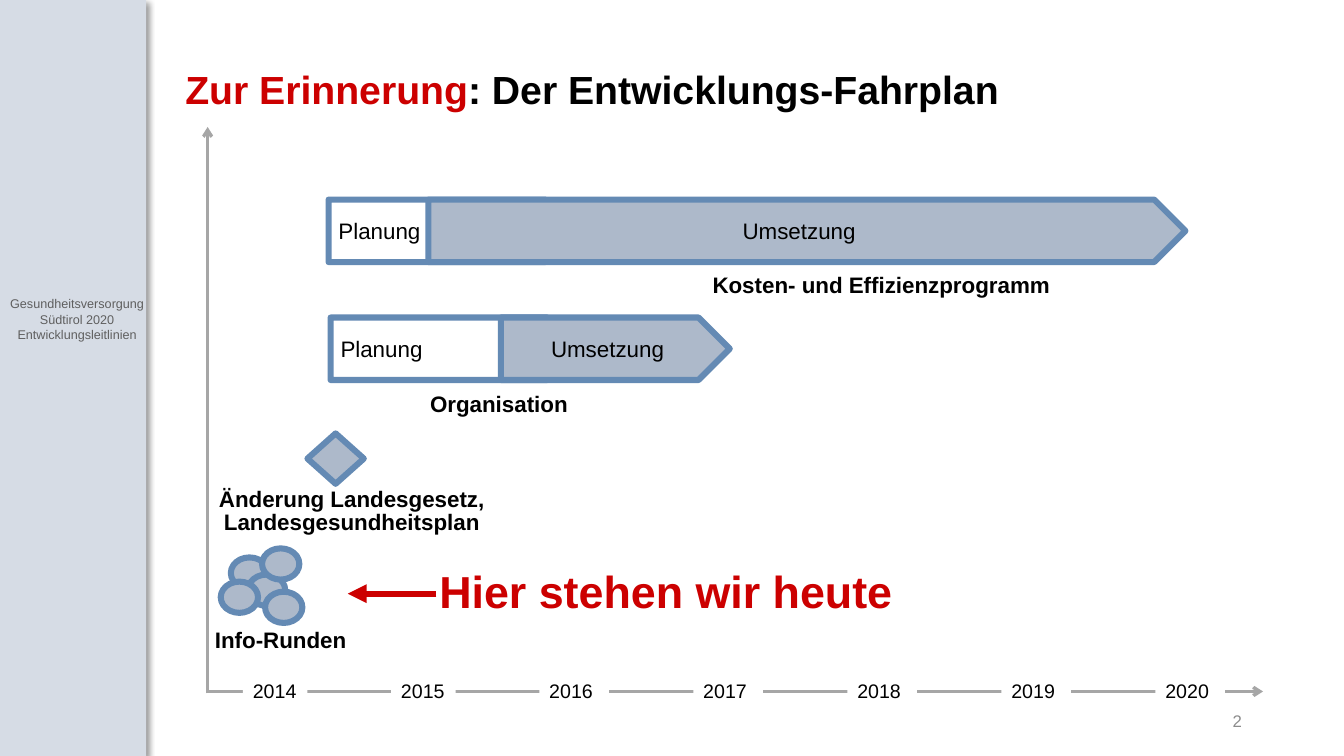
import pptx
import pptx.util
import pptx.dml.color
import pptx.enum.shapes
import pptx.enum.text
import pptx.oxml
import pptx.oxml.ns

CELL = pptx.util.Inches(0.1)
COLUMNS, ROWS = 133.33, 75
STEEL, GREY, RED, BLACK, WHITE, BLUE = "ADB9CA", "A6A6A6", "CC0000", "000000", "FFFFFF", "648AB4"
color = pptx.dml.color.RGBColor.from_string
Kind = pptx.enum.shapes.MSO_SHAPE
Align = pptx.enum.text.PP_ALIGN
Anchor = pptx.enum.text.MSO_ANCHOR
DRAWING = pptx.oxml.ns.nsdecls("a")

deck = pptx.Presentation()
deck.slide_width = int(COLUMNS * CELL)
deck.slide_height = ROWS * CELL
slide = deck.slides.add_slide(deck.slide_layouts[6])


def place(shapes, kind, area, fill=None, outline=None):
    shape = shapes.add_shape(kind, *[int(part * CELL) for part in area])
    shape.shadow.inherit = False
    if fill:
        shape.fill.solid()
        shape.fill.fore_color.rgb = color(fill)
    else:
        shape.fill.background()
    if outline:
        shape.line.color.rgb = color(outline)
        shape.line.width = pptx.util.Pt(4.33)
    else:
        shape.line.fill.background()
    return shape


def write(target, lines, size, ink=BLACK, bold=False, align=Align.LEFT,
          anchor=Anchor.TOP, spacing=None, wrap=True):
    if isinstance(target, tuple):
        target = slide.shapes.add_textbox(*[int(part * CELL) for part in target])
    frame = target.text_frame
    frame.word_wrap = wrap
    frame.vertical_anchor = anchor
    frame.text = "\n".join(lines)
    for paragraph in frame.paragraphs:
        paragraph.alignment = align
        paragraph.line_spacing = spacing
        paragraph.font.name = "Arial"
        paragraph.font.size = pptx.util.Pt(size)
        paragraph.font.bold = bold
        paragraph.font.color.rgb = color(ink)
    return frame.paragraphs[0]


sidebar = place(slide.shapes, Kind.RECTANGLE, (0, 0, 14.5, ROWS), "D6DCE5")
sidebar.shadow.inherit = True
sidebar._element.spPr.append(pptx.oxml.parse_xml(
    f'<a:effectLst {DRAWING}><a:outerShdw blurRad="50800" dist="38100" dir="2700000">'
    '<a:srgbClr val="000000"><a:alpha val="40000"/></a:srgbClr></a:outerShdw></a:effectLst>'))
write((0, 28.9, 15.3, 7), ["Gesundheitsversorgung Südtirol 2020", "Entwicklungsleitlinien"],
      9, "5F5F5F", align=Align.CENTER)

title = write((17.4, 4, 106.8, 10.3), ["Zur Erinnerung"], 28, bold=True,
              anchor=Anchor.MIDDLE, spacing=0.9)
title.runs[0].font.color.rgb = color(RED)
title.add_run().text = ": Der Entwicklungs-Fahrplan"

for start, end, ink, width, tip in [
    ((20.6, 68.8), (20.6, 12.6), GREY, 2.25, "arrow"),
    ((20.6, 68.6), (125.3, 68.6), GREY, 2.25, "arrow"),
    ((43.3, 58.9), (34.5, 58.9), RED, 4.5, "triangle"),
]:
    arrow = slide.shapes.add_connector(
        pptx.enum.shapes.MSO_CONNECTOR.STRAIGHT, *[int(part * CELL) for part in start + end])
    arrow.line.color.rgb = color(ink)
    arrow.line.width = pptx.util.Pt(width)
    arrow.line._get_or_add_ln().append(
        pptx.oxml.parse_xml(f'<a:tailEnd {DRAWING} type="{tip}"/>'))
    arrow._element.spPr.append(pptx.oxml.parse_xml(f"<a:effectLst {DRAWING}/>"))

for index, year in enumerate(range(2014, 2021)):
    left = 24.1 + 14.7 * min(index, 2) + 15.28 * max(index - 2, 0)
    label = place(slide.shapes, Kind.RECTANGLE,
                  (left, 66.9, 6.4 if index < 2 else 6.9, 3.4), WHITE)
    write(label, [str(year)], 14, wrap=False)

for top, planning_left, rollout_left, rollout_width in [
    (19.8, 32.6, 42.5, 75.1), (31.5, 32.8, 49.7, 22.7),
]:
    planning = place(slide.shapes, Kind.PENTAGON, (planning_left, top, 24.6, 6.2), outline=BLUE)
    write(planning, ["Planung"], 16, anchor=Anchor.MIDDLE)
    rollout = place(slide.shapes, Kind.PENTAGON,
                    (rollout_left, top, rollout_width, 6.2), STEEL, BLUE)
    write(rollout, ["Umsetzung"], 16, align=Align.CENTER, anchor=Anchor.MIDDLE)

place(slide.shapes, Kind.DIAMOND, (30.5, 43, 5.6, 5), STEEL, BLUE)
info_rounds = slide.shapes.add_group_shape().shapes
for left, top in [(22.9, 55.3), (24.6, 57), (26.3, 58.7), (21.9, 57.7), (26, 54.4)]:
    place(info_rounds, Kind.OVAL, (left, top, 3.7, 3.1), STEEL, BLUE)

for area, caption, align in [
    ((69.7, 26.7, 37.2, 3.4), "Kosten- und Effizienzprogramm", Align.LEFT),
    ((33.2, 38.5, 32.6, 3.4), "Organisation", Align.CENTER),
    ((16.7, 47.9, 36.4, 5.7), "Änderung Landesgesetz, Landesgesundheitsplan", Align.CENTER),
    ((20.1, 61.9, 15.5, 3.4), "Info-Runden", Align.CENTER),
]:
    write(area, [caption], 16, bold=True, align=align, spacing=pptx.util.Pt(17))

write((42.6, 53.8, 48.3, 10.3), ["Hier stehen wir heute"], 32, RED, True,
      anchor=Anchor.MIDDLE, spacing=0.9)
write((94.2, 69.5, 30, 4), ["2"], 12, "8C8C8C", align=Align.RIGHT, anchor=Anchor.MIDDLE)

deck.save("out.pptx")
